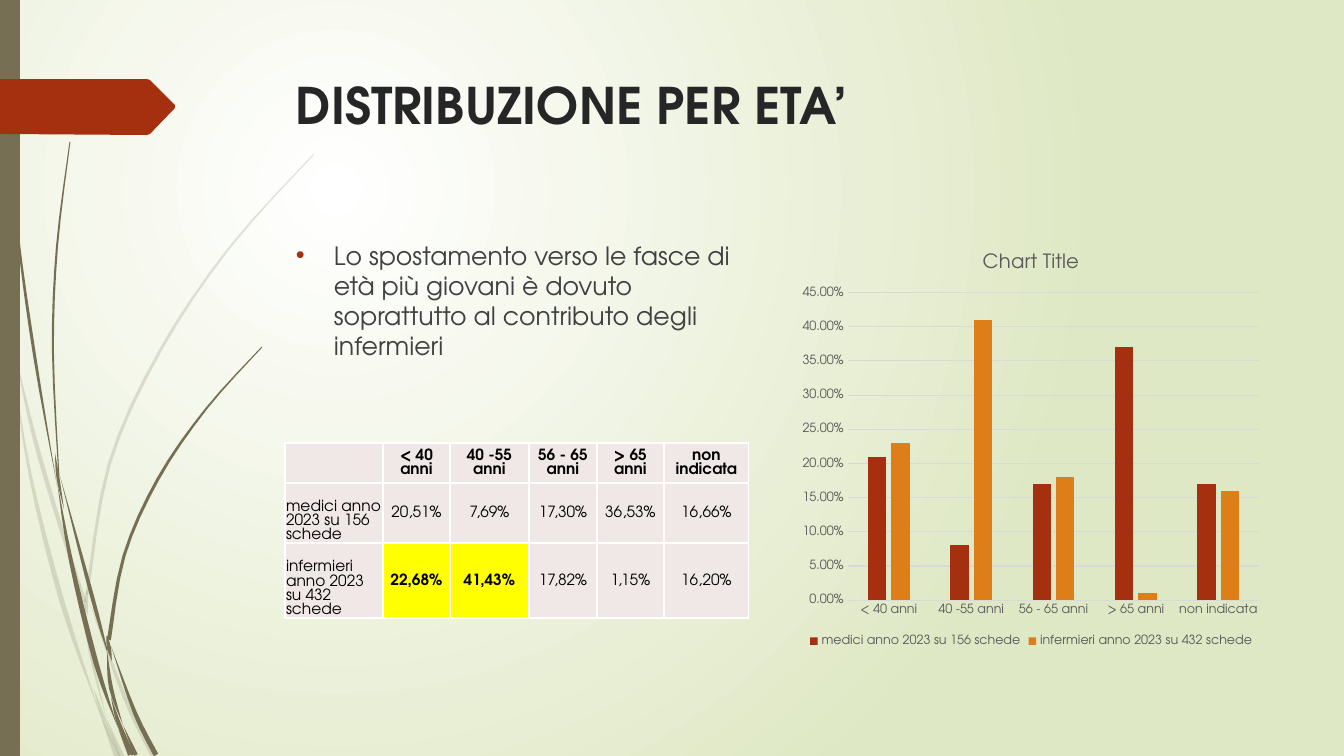
import math
from dataclasses import dataclass

import lxml.etree as etree
import pptx
import pptx.chart.data
import pptx.dml.color
import pptx.enum.chart
import pptx.enum.shapes
import pptx.enum.text
import pptx.oxml.ns
import pptx.util

TITLE = "DISTRIBUZIONE PER ETA’"
MESSAGE = ("Lo spostamento verso le fasce di età più giovani è dovuto "
           "soprattutto al contributo degli infermieri")
CHART_TITLE = "Chart Title"
AGE_BANDS = ["< 40 anni", "40 -55 anni", "56 - 65 anni", "> 65 anni", "non indicata"]
SHARES = {
    "medici anno 2023 su 156 schede": ["20,51%", "7,69%", "17,30%", "36,53%", "16,66%"],
    "infermieri anno 2023 su 432 schede": ["22,68%", "41,43%", "17,82%", "1,15%", "16,20%"],
}
HIGHLIGHTED = {(2, 1), (2, 2)}  # row, column

COLUMN_WIDTHS = [98, 67, 79, 68, 67, 85]
ROW_HEIGHTS = [40, 60, 61]

# Centre line of each blade of grass: x, y, thickness in px
PALE_BLADES = [
    [(0, 293, 4), (6, 322, 3), (11, 353, 0)],
    [(14, 348, 0), (34, 436, 4), (60, 525, 4), (85, 602, 3)],
    [(89, 601, 0), (125, 698, 4), (154, 757, 5)],
    [(106, 717, 0), (122, 757, 5)],
    [(11, 353, 0), (30, 474, 3), (63, 605, 5), (102, 719, 0)],
    [(85, 604, 0), (90, 651, 3), (106, 717, 0)],
    [(314, 154, 1), (230, 247, 2), (160, 351, 3), (109, 465, 3), (87, 595, 3)],
    [(102, 720, 0), (117, 757, 5)],
    [(87, 591, 1), (86, 604, 4), (88, 615, 0)],
    [(94, 689, 0), (104, 720, 4), (120, 757, 1)],
]
DARK_BLADES = [
    [(4, 0, 1), (8, 111, 1), (18, 235, 2), (35, 358, 3), (57, 485, 0)],
    [(60, 476, 0), (92, 596, 4), (107, 650, 1)],
    [(111, 646, 0), (135, 713, 4), (156, 755, 5)],
    [(57, 481, 0), (71, 561, 4), (96, 663, 5), (118, 728, 0)],
    [(70, 142, 1), (57, 247, 2), (53, 352, 2), (59, 476, 1)],
    [(123, 725, 0), (136, 755, 4)],
    [(55, 453, 0), (58, 478, 3), (64, 509, 0)],
    [(262, 347, 1), (206, 409, 2), (158, 479, 3), (124, 556, 3), (109, 640, 4)],
    [(118, 728, 0), (130, 755, 4)],
    [(107, 650, 0), (111, 688, 4), (123, 725, 0)],
    [(107, 636, 1), (109, 648, 4), (112, 661, 0)],
    [(111, 697, 0), (119, 724, 4), (133, 755, 3)],
]
ARROW = [(0, 79), (147, 79), (150, 80), (175, 105), (175, 108), (150, 134), (147, 135), (0, 134)]


@dataclass(frozen=True)
class Theme:
    font: str = "TeX Gyre Adventor"
    glow: str = "FFFFFF"
    backdrop: str = "DFE8C4"
    olive: str = "766F54"
    red: str = "A53010"
    orange: str = "DE7E18"
    heading: str = "262626"
    body: str = "404040"
    black: str = "000000"
    label: str = "595959"
    grid: str = "D9D9D9"
    cell: str = "F0E8E7"
    highlight: str = "FFFF00"
    title_size: int = 36
    body_size: int = 18
    chart_title_size: int = 14
    table_size: int = 11
    label_size: int = 9


THEME = Theme()


def px(length):
    return round(length * 914400 / 100.8)


def rgb(color):
    return pptx.dml.color.RGBColor.from_string(color)


def add_xml(parent, tag, **attributes):
    return etree.SubElement(parent, pptx.oxml.ns.qn(tag), attributes)


def set_font(font, size, color, bold=False):
    font.name, font.size, font.bold = THEME.font, pptx.util.Pt(size), bold
    font.color.rgb = rgb(color)


def paint(shape, color, alpha=None):
    shape.shadow.inherit = False
    shape.line.fill.background()
    shape.fill.solid()
    shape.fill.fore_color.rgb = rgb(color)
    if alpha:
        add_xml(shape.fill._xPr.find(".//" + pptx.oxml.ns.qn("a:srgbClr")), "a:alpha", val=str(alpha * 1000))


def add_outline(slide, points, color, alpha=None):
    pen = slide.shapes.build_freeform(px(points[0][0]), px(points[0][1]), scale=1.0)
    pen.add_line_segments([(px(x), px(y)) for x, y in points[1:]], close=True)
    paint(pen.convert_to_shape(), color, alpha)


def smooth(knots, steps=4):
    """Catmull-Rom curve through the knots."""
    if len(knots) == 2:
        return knots
    padded = [knots[0], *knots, knots[-1]]
    curve = []
    for a, b, c, d in zip(padded, padded[1:], padded[2:], padded[3:]):
        for t in (step / steps for step in range(steps)):
            curve.append(tuple(
                q + t * (r - p) / 2 + t**2 * (2 * p - 5 * q + 4 * r - s) / 2
                + t**3 * (3 * q - p - 3 * r + s) / 2
                for p, q, r, s in zip(a, b, c, d)))
    return curve + [knots[-1]]


def add_blade(slide, knots, alpha=None):
    curve = smooth(knots)
    left, right = [], []
    for i, (x, y, thickness) in enumerate(curve):
        before, after = curve[max(i - 1, 0)], curve[min(i + 1, len(curve) - 1)]
        angle = math.atan2(after[1] - before[1], after[0] - before[0])
        dx, dy = math.sin(angle) * thickness / 2, math.cos(angle) * thickness / 2
        left.append((x + dx, y - dy))
        right.append((x - dx, y + dy))
    add_outline(slide, left + right[::-1], THEME.olive, alpha)


def set_background(slide):
    fill = slide.background.fill
    fill.gradient()
    gradient = fill._xPr.find(pptx.oxml.ns.qn("a:gradFill"))
    for child in list(gradient):
        gradient.remove(child)
    stops = add_xml(gradient, "a:gsLst")
    for position, color in (("0", THEME.glow), ("100000", THEME.backdrop)):
        add_xml(add_xml(stops, "a:gs", pos=position), "a:srgbClr", val=color)
    circle = add_xml(gradient, "a:path", path="circle")
    add_xml(circle, "a:fillToRect", l="50000", t="50000", r="100000", b="100000")


def add_text(slide, box, text, size, color, bold=False):
    frame = slide.shapes.add_textbox(*map(px, box)).text_frame
    frame.word_wrap = True
    frame.text = text
    set_font(frame.paragraphs[0].runs[0].font, size, color, bold)
    return frame.paragraphs[0]


def add_bullet(paragraph):
    paragraph.space_before = pptx.util.Pt(10)
    properties = paragraph._p.get_or_add_pPr()
    properties.set("marL", str(px(38)))
    properties.set("indent", str(-px(38)))
    add_xml(add_xml(properties, "a:buClr"), "a:srgbClr", val=THEME.red)
    add_xml(properties, "a:buFont", typeface="Arial")
    add_xml(properties, "a:buChar", char="•")


def format_cell(cell, text, row, column):
    anchor, align = pptx.enum.text.MSO_ANCHOR, pptx.enum.text.PP_ALIGN
    is_label, is_highlighted = column == 0, (row, column) in HIGHLIGHTED
    cell.margin_left = cell.margin_right = cell.margin_top = px(1)
    cell.margin_bottom = 0
    cell.vertical_anchor = anchor.BOTTOM if is_label else anchor.MIDDLE
    for side in ("a:lnL", "a:lnR", "a:lnT", "a:lnB"):
        border = add_xml(cell._tc.get_or_add_tcPr(), side, w="12700")
        add_xml(add_xml(border, "a:solidFill"), "a:srgbClr", val=THEME.glow)
    cell.fill.solid()
    cell.fill.fore_color.rgb = rgb(THEME.highlight if is_highlighted else THEME.cell)
    cell.text = text
    paragraph = cell.text_frame.paragraphs[0]
    paragraph.alignment = align.LEFT if is_label else align.CENTER
    for run in paragraph.runs:
        set_font(run.font, THEME.table_size, THEME.black, row == 0 or is_highlighted)


def add_share_table(slide):
    rows = [["", *AGE_BANDS]] + [[group, *shares] for group, shares in SHARES.items()]
    table = slide.shapes.add_table(len(rows), len(rows[0]), px(285), px(443),
                                   px(sum(COLUMN_WIDTHS)), px(sum(ROW_HEIGHTS))).table
    for column, width in zip(table.columns, COLUMN_WIDTHS):
        column.width = px(width)
    for r, (texts, height) in enumerate(zip(rows, ROW_HEIGHTS)):
        table.rows[r].height = px(height)
        for c, text in enumerate(texts):
            format_cell(table.cell(r, c), text, r, c)


def add_share_chart(slide):
    kinds = pptx.enum.chart
    data = pptx.chart.data.CategoryChartData(number_format="0.00%")
    data.categories = AGE_BANDS
    for group, shares in SHARES.items():
        data.add_series(group, [round(float(s.strip("%").replace(",", ".")) / 100, 2) for s in shares])
    chart = slide.shapes.add_chart(kinds.XL_CHART_TYPE.COLUMN_CLUSTERED,
                                   px(793), px(234), px(476), px(417), data).chart
    set_font(chart.font, THEME.label_size, THEME.label)
    heading = chart.chart_title.text_frame
    heading.text = CHART_TITLE
    set_font(heading.paragraphs[0].runs[0].font, THEME.chart_title_size, THEME.label)
    chart.has_legend = True
    chart.legend.position = kinds.XL_LEGEND_POSITION.BOTTOM
    chart.legend.include_in_layout = False
    set_font(chart.legend.font, THEME.label_size, THEME.label)
    bands, percent = chart.category_axis, chart.value_axis
    for axis in (bands, percent):
        axis.major_tick_mark = axis.minor_tick_mark = kinds.XL_TICK_MARK.NONE
        set_font(axis.tick_labels.font, THEME.label_size, THEME.label)
    percent.minimum_scale, percent.maximum_scale, percent.major_unit = 0, 0.45, 0.05
    percent.tick_labels.number_format = "0.00%"
    percent.tick_labels.number_format_is_linked = False
    percent.format.line.fill.background()
    for line in (bands.format.line, percent.major_gridlines.format.line):
        line.color.rgb, line.width = rgb(THEME.grid), pptx.util.Pt(0.75)
    plot = chart.plots[0]
    plot.gap_width, plot.overlap, plot.vary_by_categories = 219, -27, False
    for series, color in zip(plot.series, (THEME.red, THEME.orange)):
        series.format.fill.solid()
        series.format.fill.fore_color.rgb = rgb(color)


def main():
    deck = pptx.Presentation()
    deck.slide_width, deck.slide_height = px(1344), px(756)
    slide = deck.slides.add_slide(deck.slide_layouts[6])
    set_background(slide)
    for blades, alpha in ((PALE_BLADES, 20), (DARK_BLADES, None)):
        for blade in blades:
            add_blade(slide, blade, alpha)
    paint(slide.shapes.add_shape(pptx.enum.shapes.MSO_SHAPE.RECTANGLE, 0, 0, px(20), px(756)), THEME.olive)
    add_outline(slide, ARROW, THEME.red)
    add_text(slide, (286, 69, 983, 141), TITLE, THEME.title_size, THEME.heading, bold=True)
    add_bullet(add_text(slide, (286, 235, 476, 161), MESSAGE, THEME.body_size, THEME.body))
    add_share_chart(slide)
    add_share_table(slide)
    deck.save("out.pptx")


if __name__ == "__main__":
    main()
